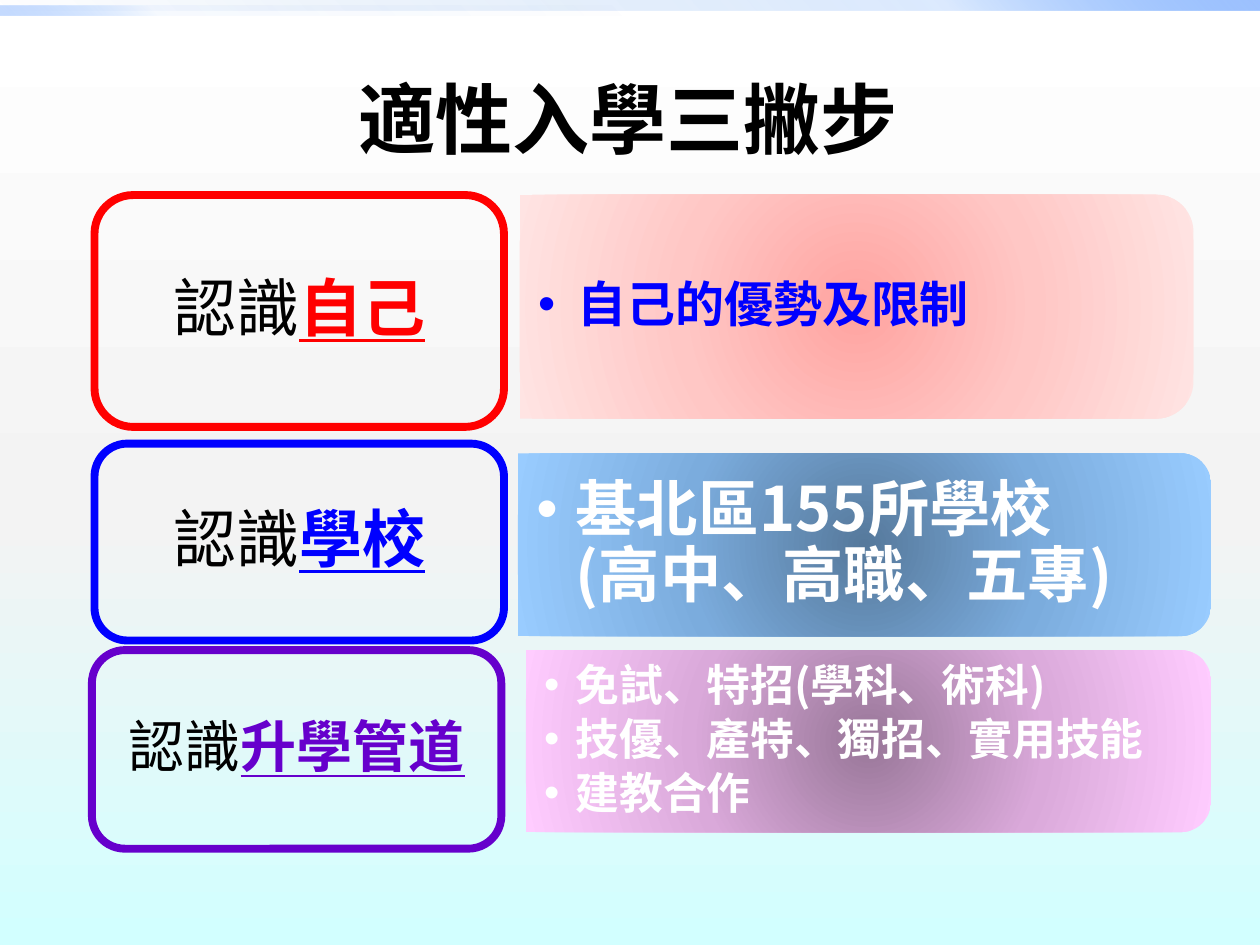
from dataclasses import dataclass
from typing import Optional

from lxml.etree import SubElement
from pptx import Presentation
from pptx.dml.color import RGBColor
from pptx.enum.shapes import MSO_SHAPE
from pptx.enum.text import MSO_ANCHOR, PP_ALIGN
from pptx.oxml.ns import qn
from pptx.util import Pt

FONT = "Noto Sans CJK SC"
WHITE, BLACK, BLUE = "FFFFFF", "000000", "0000FF"
PAD = 5  # top and bottom text inset


@dataclass
class Card:
    """Outlined box on the left: a plain word, then a marked one."""
    left: float
    top: float
    high: float
    hue: str
    mark: str
    size: float


@dataclass
class Panel:
    """Shaded box on the right with bullet lines."""
    left: float
    top: float
    wide: float
    high: float
    stops: list
    lines: list
    size: float
    ink: str
    hang: float


ROWS = [
    (Card(54, 111.5, 132.5, "FF0000", "自己", 36),
     Panel(297, 111.25, 385, 128, [(0, "FFA3A0"), (50, "FFC7C5"), (100, "FFE4E3")],
           ["自己的優勢及限制"], 28, BLUE, 22.5)),
    (Card(54, 253.5, 112.5, BLUE, "學校", 36),
     Panel(296, 259, 396, 104.5, [(0, "56799C"), (50, "7BACDD"), (100, "99CCFF")],
           ["基北區155所學校\n(高中、高職、五專)"], 35, WHITE, 22.5)),
    (Card(52.5, 371.5, 113.5, "6600CC", "升學管道", 32),
     Panel(300.5, 371.5, 391.5, 104, [(0, "997799"), (50, "DAA9DA"), (100, "FFCCFF")],
           ["免試、特招(學科、術科)", "技優、產特、獨招、實用技能", "建教合作"],
           25, WHITE, 18)),
]


def color(code: str) -> RGBColor:
    return RGBColor.from_string(code)


def shade(host, stops: list, angle: Optional[float] = None) -> None:
    """Turn the solid fill of host into a gradient: linear, or round without angle."""
    fill = host.find(".//" + qn("a:solidFill"))
    grad = fill.makeelement(qn("a:gradFill"), {"rotWithShape": "1"})
    items = SubElement(grad, qn("a:gsLst"))
    for place, code, *alpha in stops:
        stop = SubElement(items, qn("a:gs"), pos=str(place * 1000))
        tint = SubElement(stop, qn("a:srgbClr"), val=code)
        for part in alpha:
            SubElement(tint, qn("a:alpha"), val=str(part * 1000))
    if angle is None:
        way = SubElement(grad, qn("a:path"), {"path": "circle"})
        SubElement(way, qn("a:fillToRect"), {side: "50000" for side in "ltrb"})
    else:
        SubElement(grad, qn("a:lin"), ang=str(angle * 60000), scaled="0")
    fill.getparent().replace(fill, grad)


def add_box(slide, kind, left: float, top: float, wide: float, high: float):
    box = slide.shapes.add_shape(kind, Pt(left), Pt(top), Pt(wide), Pt(high))
    box.shadow.inherit = False
    box.fill.background()
    box.line.fill.background()
    return box


def blend(box, stops: list, angle: Optional[float] = None) -> None:
    box.fill.solid()
    shade(box.element, stops, angle)


def set_frame(box, side: float):
    frame = box.text_frame
    frame.word_wrap = True
    frame.vertical_anchor = MSO_ANCHOR.MIDDLE
    frame.margin_left = frame.margin_right = Pt(side)
    frame.margin_top = frame.margin_bottom = Pt(PAD)
    return frame


def add_text(para, text: str, *, size: float, ink: str = BLACK,
             bold: bool = False, under: bool = False) -> None:
    for count, line in enumerate(text.split("\n")):
        if count:
            para.add_line_break()
        run = para.add_run()
        run.text = line
        font = run.font
        font.size, font.bold, font.underline = Pt(size), bold, under
        font.color.rgb = color(ink)
        font.name = FONT
        SubElement(run.font._element, qn("a:ea"), typeface=FONT)


def space(para, size: float, after: float) -> None:
    para.line_spacing = 0.9
    para.space_after = Pt(round(size * after, 2))


def add_bullet(para, hang: float) -> None:
    props = para._p.get_or_add_pPr()
    props.set("marL", str(Pt(hang)))
    props.set("indent", str(-Pt(hang)))
    SubElement(props, qn("a:buFont"), typeface="Arial")
    SubElement(props, qn("a:buChar"), char="•")


def draw_card(slide, card: Card) -> None:
    box = add_box(slide, MSO_SHAPE.ROUNDED_RECTANGLE, card.left, card.top, 234, card.high)
    box.line.color.rgb = color(card.hue)
    box.line.width = Pt(4.5)
    para = set_frame(box, 10).paragraphs[0]
    para.alignment = PP_ALIGN.CENTER
    space(para, card.size, 0.35)
    add_text(para, "認識", size=card.size)
    add_text(para, card.mark, size=card.size, ink=card.hue, bold=True, under=True)


def draw_panel(slide, panel: Panel) -> None:
    # A quarter turn puts the two round corners on the right
    shift = (panel.wide - panel.high) / 2
    box = add_box(slide, MSO_SHAPE.ROUND_2_SAME_RECTANGLE, panel.left + shift,
                  panel.top - shift, panel.high, panel.wide)
    box.rotation = 90
    blend(box, panel.stops)
    # Upright text, kept clear of the corners
    edge = 0.05 * panel.high
    area = slide.shapes.add_textbox(Pt(panel.left), Pt(panel.top + edge),
                                    Pt(panel.wide - edge), Pt(panel.high - 2 * edge))
    frame = set_frame(area, 10.5)
    for count, line in enumerate(panel.lines):
        para = frame.add_paragraph() if count else frame.paragraphs[0]
        space(para, panel.size, 0.15)
        add_bullet(para, panel.hang)
        add_text(para, line, size=panel.size, ink=panel.ink, bold=True)


def main() -> None:
    deck = Presentation()
    deck.slide_width, deck.slide_height = Pt(720), Pt(540)
    slide = deck.slides.add_slide(deck.slide_layouts[6])

    # Background
    slide.background.fill.solid()
    shade(slide.element, [(0, WHITE), (55, "F3F3F3"), (100, "D2FFFF")], 90)

    # Bands along the top edge
    for top, wide, mid, end, angle in [(0, 720, 20, 100, 315), (3, 360, 5, 60, 135)]:
        band = add_box(slide, MSO_SHAPE.RECTANGLE, 0, top, wide, 6)
        blend(band, [(0, "0058B7", 0), (75, "4F95FF", mid), (100, "9EC2FF", end)], angle)

    # Title
    title = slide.shapes.add_textbox(Pt(35), Pt(32), Pt(648), Pt(71))
    para = set_frame(title, 7).paragraphs[0]
    para.alignment = PP_ALIGN.CENTER
    add_text(para, "適性入學三撇步", size=44, bold=True)

    # Three steps
    for card, panel in ROWS:
        draw_panel(slide, panel)
        draw_card(slide, card)

    deck.save("out.pptx")


if __name__ == "__main__":
    main()
